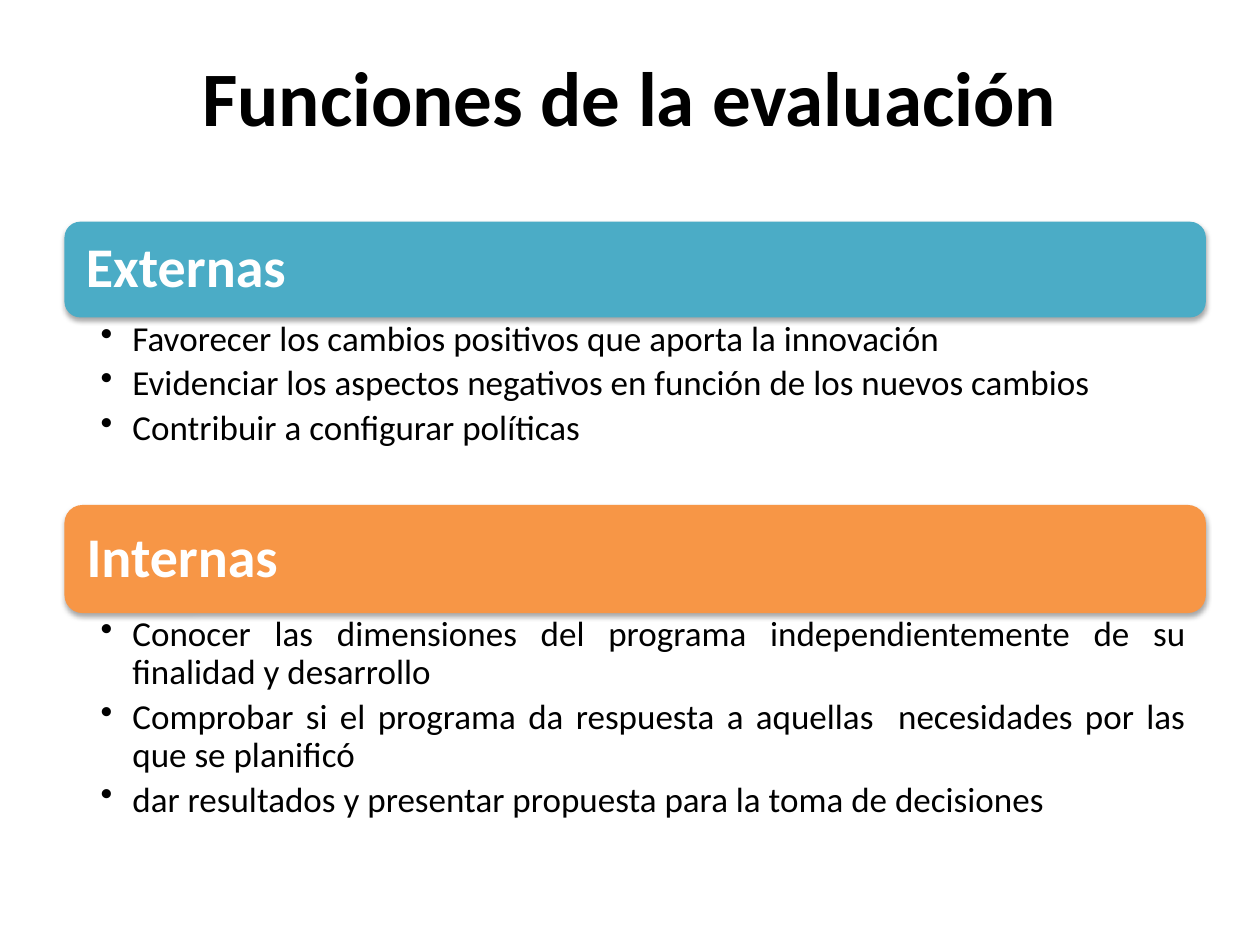
import lxml.etree
import pptx
import pptx.dml.color
import pptx.enum.shapes
import pptx.enum.text
import pptx.oxml
import pptx.oxml.ns
import pptx.util

Cm = pptx.util.Cm
Pt = pptx.util.Pt
qn = pptx.oxml.ns.qn
ALIGN = pptx.enum.text.PP_ALIGN
ANCHOR = pptx.enum.text.MSO_ANCHOR
SHADOW = (
    '<a:outerShdw xmlns:a="http://schemas.openxmlformats.org/drawingml/2006/main" '
    'blurRad="39370" dist="22860" dir="5400000" rotWithShape="0">'
    '<a:srgbClr val="000000"><a:alpha val="35000"/></a:srgbClr></a:outerShdw>'
)


def color(value):
    return pptx.dml.color.RGBColor.from_string(value)


def write(shape, text, size, hue="000000", bold=False, align=ALIGN.LEFT, anchor=ANCHOR.MIDDLE,
          insets=(0.25, 0.13, 0.25, 0.13), line=1.0, after=0, bullet=False):
    frame = shape.text_frame
    frame.word_wrap = True
    frame.vertical_anchor = anchor
    frame.margin_left, frame.margin_top, frame.margin_right, frame.margin_bottom = map(Cm, insets)
    frame.text = text
    for paragraph in frame.paragraphs:
        paragraph.alignment = align
        paragraph.line_spacing = line
        paragraph.space_after = Pt(after)
        paragraph.font.name = "Calibri"
        paragraph.font.size = Pt(size)
        paragraph.font.bold = bold
        paragraph.font.color.rgb = color(hue)
        for run in paragraph.runs:
            run.font.name = "Calibri"
            run.font.size = Pt(size)
            run.font.bold = bold
            run.font.color.rgb = color(hue)
        if bullet:
            paragraph.level = 1
            properties = paragraph._p.get_or_add_pPr()
            properties.set("marL", str(Cm(0.64)))
            properties.set("indent", str(Cm(-0.64)))
            mark = lxml.etree.Element(qn("a:buChar"), char="•")
            properties.find(qn("a:defRPr")).addprevious(mark)


presentation = pptx.Presentation()
presentation.slide_width = Cm(25.4)
presentation.slide_height = Cm(19.05)
slide = presentation.slides.add_slide(presentation.slide_layouts[6])

title = slide.shapes.add_textbox(Cm(1.27), Cm(0.33), Cm(22.86), Cm(3.18))
write(title, "Funciones de la evaluación", size=44, bold=True, align=ALIGN.CENTER)

sections = [
    ("Externas", "4BACC6", 1.93, 3.78, [
        "Favorecer los cambios positivos que aporta la innovación",
        "Evidenciar los aspectos negativos en función de los nuevos cambios",
        "Contribuir a configurar políticas",
    ]),
    ("Internas", "F79646", 2.18, 4.42, [
        "Conocer las dimensiones del programa independientemente de su finalidad y desarrollo",
        "Comprobar si el programa da respuesta a aquellas  necesidades por las que se planificó",
        "dar resultados y presentar propuesta para la toma de decisiones",
    ]),
]
left, top, width = 1.3, 4.47, 23.01

for heading, hue, heading_height, points_height, points in sections:
    banner = slide.shapes.add_shape(pptx.enum.shapes.MSO_SHAPE.ROUNDED_RECTANGLE,
                                    Cm(left), Cm(top), Cm(width), Cm(heading_height))
    banner.fill.solid()
    banner.fill.fore_color.rgb = color(hue)
    banner.line.fill.background()
    banner.shadow.inherit = False
    effects = banner._element.spPr.find(qn("a:effectLst"))
    effects.append(pptx.oxml.parse_xml(SHADOW))
    write(banner, heading, size=32, hue="FFFFFF", bold=True, line=0.9,
          insets=(0.34, 0.33, 0.34, 0.33))
    top += heading_height

    functions = slide.shapes.add_textbox(Cm(left), Cm(top), Cm(width), Cm(points_height))
    write(functions, "\n".join(points), size=20, align=ALIGN.JUSTIFY, anchor=ANCHOR.TOP,
          insets=(0.73, 0.07, 0.4, 0.07), line=0.9, after=4, bullet=True)
    top += points_height

presentation.save("out.pptx")
